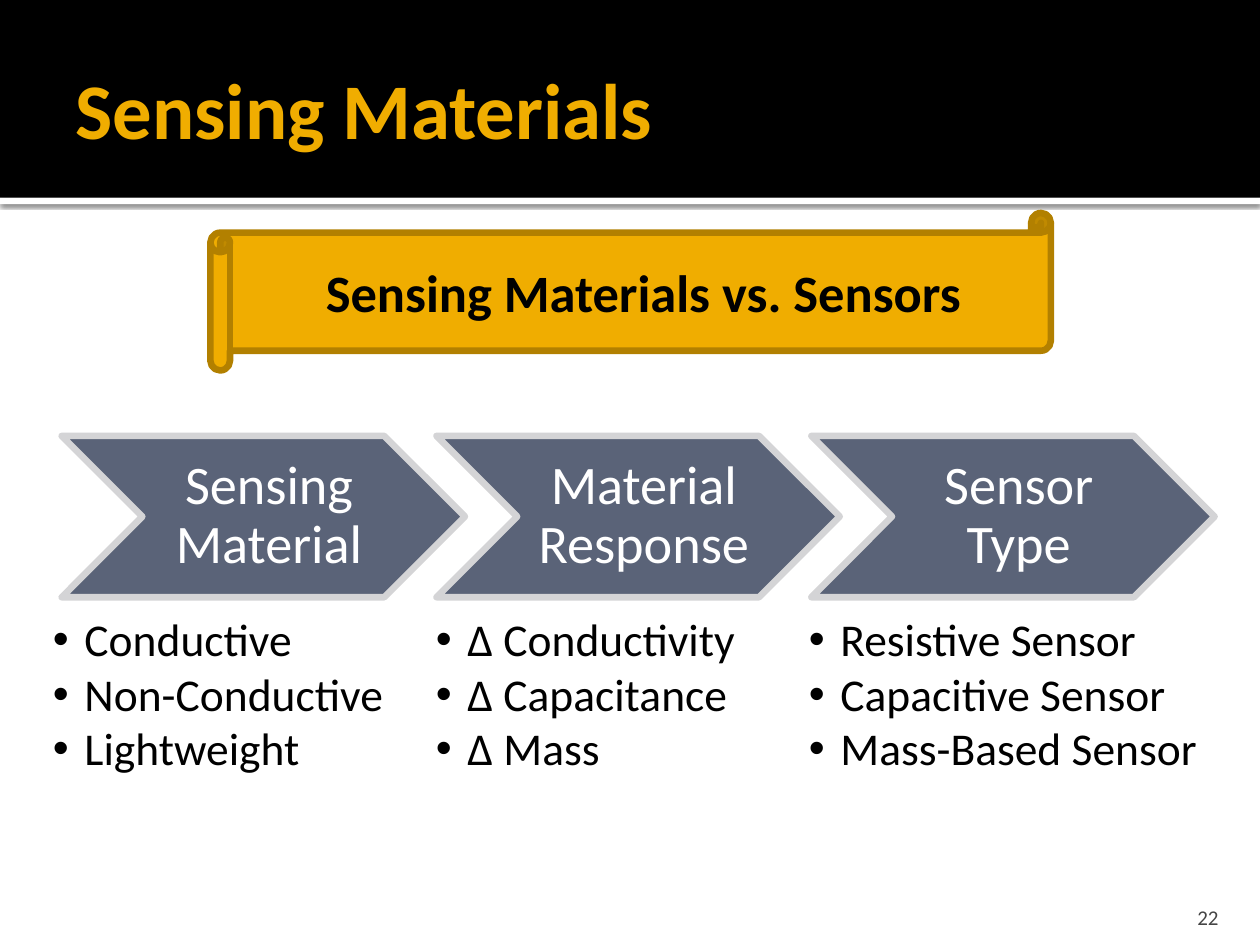
from lxml import etree
from pptx import Presentation
from pptx.dml.color import RGBColor
from pptx.enum.shapes import MSO_SHAPE
from pptx.enum.text import MSO_ANCHOR, MSO_AUTO_SIZE, PP_ALIGN
from pptx.oxml.ns import qn
from pptx.util import Inches, Pt

RECTANGLE, SCROLL, CHEVRON = MSO_SHAPE.RECTANGLE, MSO_SHAPE.HORIZONTAL_SCROLL, MSO_SHAPE.CHEVRON
TOP, MIDDLE, BOTTOM = MSO_ANCHOR.TOP, MSO_ANCHOR.MIDDLE, MSO_ANCHOR.BOTTOM
LEFT, CENTER, RIGHT = PP_ALIGN.LEFT, PP_ALIGN.CENTER, PP_ALIGN.RIGHT
NO_AUTOFIT = MSO_AUTO_SIZE.NONE

GOLD, DARK_GOLD, SLATE, SILVER = "F0AD00", "B28000", "5A6378", "D4D4D6"
BLACK, WHITE, GRAY = "000000", "FFFFFF", "454545"
COMPARISON_LAYOUT = 4

prs = Presentation()
prs.slide_width, prs.slide_height = Inches(10), Inches(7.5)
slide = prs.slides.add_slide(prs.slide_layouts[COMPARISON_LAYOUT])


def add_block(preset, box, fill, line=None):
    """Add a shadowless filled shape; box is left, top, width, height in inches."""
    block = slide.shapes.add_shape(preset, *map(Inches, box))
    block.shadow.inherit = False
    block.fill.solid()
    block.fill.fore_color.rgb = RGBColor.from_string(fill)
    if line:
        block.line.color.rgb = RGBColor.from_string(line)
        block.line.width = Pt(3.78)
    else:
        block.line.fill.background()
    return block


def write(shape, lines, size, color, align=LEFT, anchor=MIDDLE, insets=(0.1, 0.05, 0.1, 0.05),
          bold=False, spacing=1.0, after=0):
    """Fill a shape with one paragraph per line; insets are left, top, right, bottom."""
    frame = shape.text_frame
    frame.word_wrap, frame.auto_size, frame.vertical_anchor = True, NO_AUTOFIT, anchor
    (frame.margin_left, frame.margin_top,
     frame.margin_right, frame.margin_bottom) = map(Inches, insets)
    for i, line in enumerate(lines):
        paragraph = frame.add_paragraph() if i else frame.paragraphs[0]
        paragraph.alignment, paragraph.line_spacing = align, spacing
        paragraph.space_before, paragraph.space_after = Pt(0), Pt(after)
        run = paragraph.add_run()
        run.text = line
        run.font.name, run.font.size, run.font.bold = "Calibri", Pt(size), bold
        run.font.color.rgb = RGBColor.from_string(color)
    return frame.paragraphs


# Header band, kept behind the title
divider = add_block(RECTANGLE, (0, 1.57, 10, 0.05), WHITE)
effects = divider._element.spPr.find(qn("a:effectLst"))
shadow = etree.SubElement(effects, qn("a:outerShdw"), blurRad=str(Pt(2.5)), dist=str(Pt(0.8)),
                          dir="5400000", algn="t", rotWithShape="0")
shadow_color = etree.SubElement(shadow, qn("a:srgbClr"), val=BLACK)
etree.SubElement(shadow_color, qn("a:alpha"), val="60000")
header = add_block(RECTANGLE, (0, 0, 10, 1.57), BLACK)
for band in (header, divider):
    slide.shapes._spTree.insert(2, band._element)

title = slide.shapes.title
title.left, title.top, title.width, title.height = map(Inches, (0.5, 0.17, 9, 1.37))
write(title, ["Sensing Materials"], 45, GOLD, insets=(0.1, 0.05, 0.05, 0.05), bold=True)

# Banner
banner = add_block(SCROLL, (1.67, 1.69, 6.67, 1.25), GOLD, DARK_GOLD)
heading = write(banner, ["Sensing Materials vs. Sensors"], 30, BLACK, CENTER, bold=True)[0]
heading._p.get_or_add_pPr().set("marL", str(Inches(0.13)))

# Process steps, each with its list below: label, list left, list width, items
steps = [
    ("Sensing Material", 0.42, 2.7, ["Conductive", "Non-Conductive", "Lightweight"]),
    ("Material Response", 3.46, 2.56, ["Δ Conductivity", "Δ Capacitance", "Δ Mass"]),
    ("Sensor Type", 6.42, 3.19, ["Resistive Sensor", "Capacitive Sensor", "Mass-Based Sensor"]),
]
for i, (label, list_left, list_width, items) in enumerate(steps):
    chevron = add_block(CHEVRON, (0.49 + 2.975 * i, 3.46, 3.2, 1.28), SLATE, SILVER)
    write(chevron, [label], 31, WHITE, CENTER, insets=(0.14, 0.05, 0.05, 0.05), spacing=0.9)

    item_list = slide.placeholders[i + 1]
    item_list.left, item_list.top, item_list.width, item_list.height = map(
        Inches, (list_left, 4.9, list_width, 2.52))
    for paragraph in write(item_list, items, 26, BLACK, anchor=TOP, insets=(0, 0, 0, 0),
                           spacing=0.9, after=3):
        properties = paragraph._p.get_or_add_pPr()
        properties.set("marL", str(Inches(0.25)))
        properties.set("indent", str(Inches(-0.25)))
        etree.SubElement(properties, qn("a:buFont"), typeface="Arial")
        etree.SubElement(properties, qn("a:buChar"), char="•")

unused = slide.placeholders[4]._element
unused.getparent().remove(unused)

page_number = slide.shapes.add_textbox(*map(Inches, (8.97, 7.08, 0.8, 0.3)))
write(page_number, ["22"], 12, GRAY, RIGHT, BOTTOM, insets=(0.1, 0.05, 0.1, 0))

prs.save("out.pptx")
